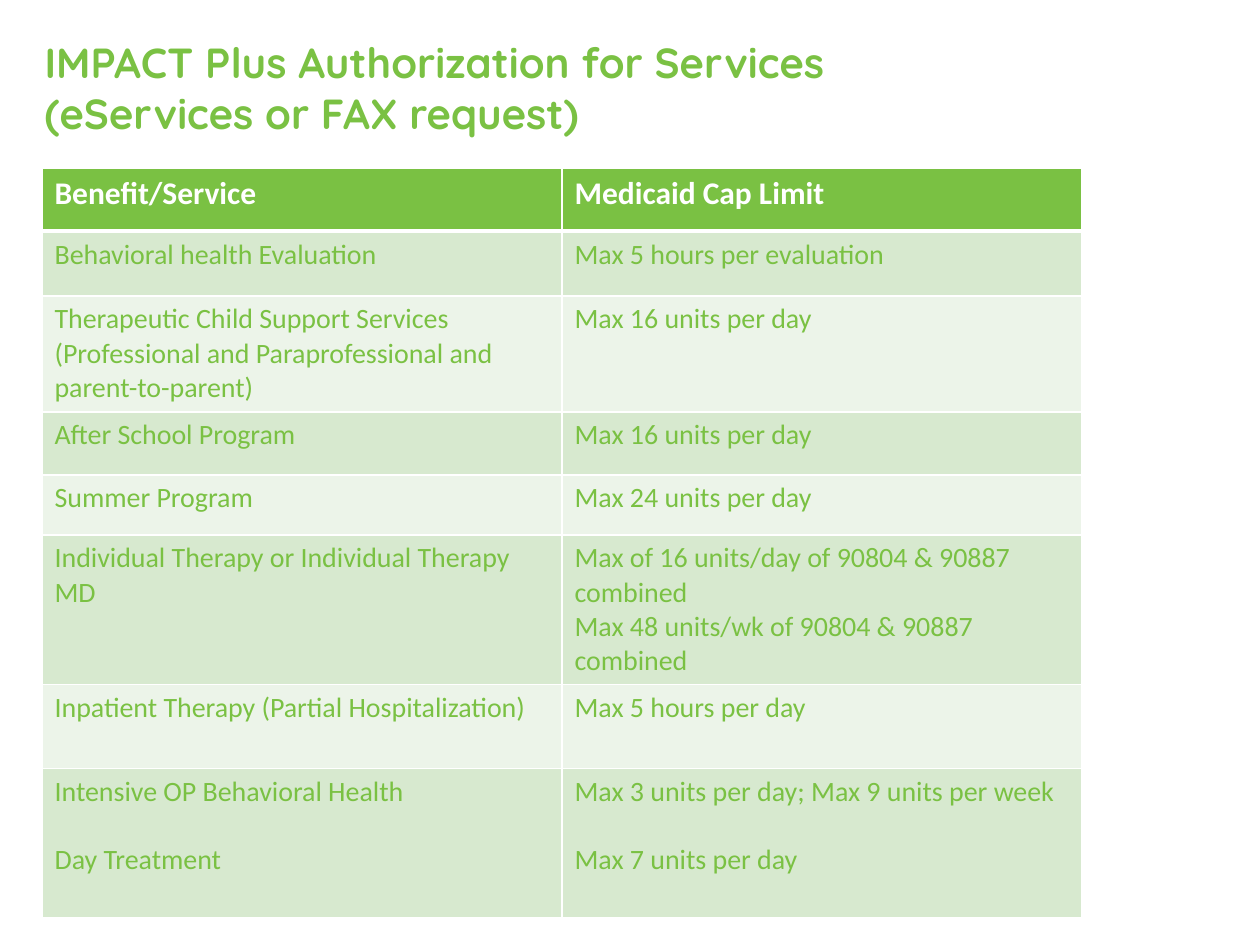
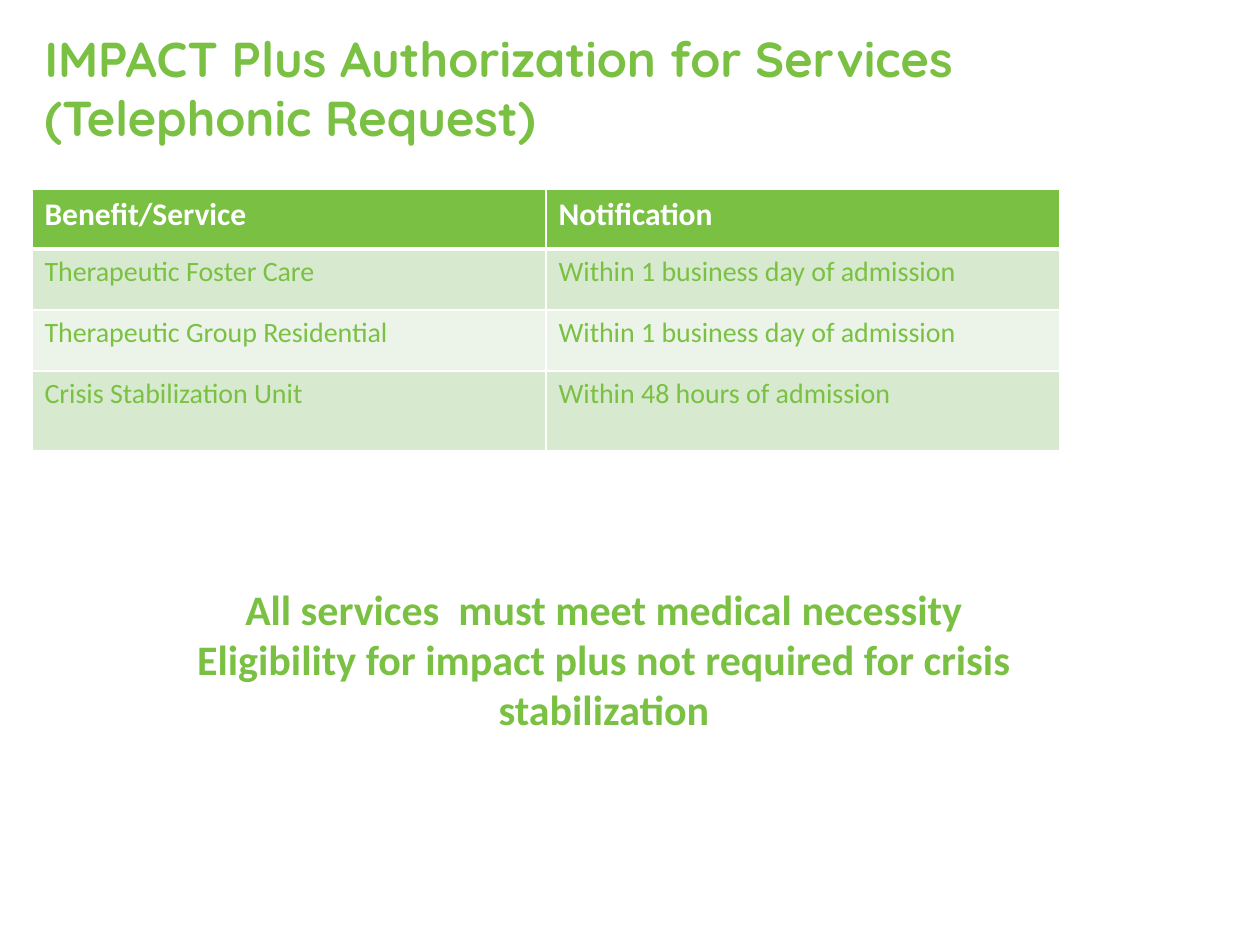
from dataclasses import dataclass

from lxml import etree
from pptx import Presentation
from pptx.dml.color import RGBColor
from pptx.enum.text import MSO_ANCHOR, PP_ALIGN
from pptx.oxml.ns import qn
from pptx.util import Emu, Pt

MIDDLE = MSO_ANCHOR.MIDDLE
LEFT, CENTER = PP_ALIGN.LEFT, PP_ALIGN.CENTER

# Shared look
PX_PER_INCH = 126
GREEN, WHITE = "7AC143", "FFFFFF"
BANDS = ("D7E9CF", "ECF4E9")
TITLE_FONT, BODY_FONT = "Quicksand", "Calibri"
TITLE_BOX = (32, 24, 1029, 126)
TITLE_ONLY = 5


@dataclass
class Row:
    height: int
    service: str
    limit: str
    gap: float = 0  # points between the paragraphs of a cell


@dataclass
class ServiceTable:
    left: int
    top: int
    col_width: int
    rows: list[Row]


@dataclass
class ServiceSlide:
    title: str
    title_size: int
    table: ServiceTable
    note: str = ""


def px(n: int) -> Emu:
    return Emu(round(n * 914400 / PX_PER_INCH))


def rgb(color: str) -> RGBColor:
    return RGBColor.from_string(color)


def set_font(p, name: str, size: int, color: str, bold: bool) -> None:
    p.font.name = name
    p.font.size = Pt(size)
    p.font.bold = bold
    p.font.color.rgb = rgb(color)


def set_border(cell, side: str, width: int) -> None:
    ln = etree.SubElement(cell._tc.get_or_add_tcPr(), qn(f"a:{side}"), w=str(Pt(width)))
    fill = etree.SubElement(ln, qn("a:solidFill"))
    etree.SubElement(fill, qn("a:srgbClr"), val=WHITE)


def add_title(s, text: str, size: int) -> None:
    title = s.shapes.title
    title.left, title.top, title.width, title.height = map(px, TITLE_BOX)
    tf = title.text_frame
    tf.text = text
    tf.vertical_anchor = MIDDLE
    p = tf.paragraphs[0]
    p.alignment = LEFT
    set_font(p, TITLE_FONT, size, GREEN, True)


def fill_cell(cell, text: str, row_no: int, gap: float) -> None:
    header = row_no == 0
    # Borders come before the fill; a thick rule sits under the header
    set_border(cell, "lnL", 1)
    set_border(cell, "lnR", 1)
    set_border(cell, "lnT", 3 if row_no == 1 else 1)
    set_border(cell, "lnB", 3 if header else 1)
    cell.fill.solid()
    cell.fill.fore_color.rgb = rgb(GREEN if header else BANDS[(row_no - 1) % 2])
    cell.text_frame.text = text
    for i, p in enumerate(cell.text_frame.paragraphs):
        if i and gap:
            p.space_before = Pt(gap)
        set_font(p, BODY_FONT, 18 if header else 16, WHITE if header else GREEN, header)


def add_service_table(s, spec_: ServiceTable) -> None:
    rows = spec_.rows
    height = sum(row.height for row in rows)
    table = s.shapes.add_table(len(rows), 2, px(spec_.left), px(spec_.top),
                               px(2 * spec_.col_width), px(height)).table
    for col in table.columns:
        col.width = px(spec_.col_width)
    for r, row in enumerate(rows):
        table.rows[r].height = px(row.height)
        for c, text in enumerate((row.service, row.limit)):
            fill_cell(table.cell(r, c), text, r, row.gap)


def add_note(s, text: str) -> None:
    tf = s.shapes.add_textbox(px(158), px(577), px(892), px(165)).text_frame
    tf.word_wrap = True
    tf.text = text
    for p in tf.paragraphs:
        p.alignment = CENTER
        set_font(p, BODY_FONT, 24, GREEN, True)


SLIDES = [
    ServiceSlide(
        "IMPACT Plus Authorization for Services\v(eServices or FAX request)", 24,
        ServiceTable(42, 168, 520, [
            Row(63, "Benefit/Service", "Medicaid Cap Limit"),
            Row(65, "Behavioral health Evaluation", "Max 5 hours per evaluation"),
            Row(116, "Therapeutic Child Support Services (Professional and "
                     "Paraprofessional and parent-to-parent)", "Max 16 units per day"),
            Row(63, "After School Program", "Max 16 units per day"),
            Row(60, "Summer Program", "Max 24 units per day"),
            Row(149, "Individual Therapy or Individual Therapy MD",
                "Max of 16 units/day of 90804 & 90887 combined\n"
                "Max 48 units/wk of 90804 & 90887 combined"),
            Row(84, "Inpatient Therapy (Partial Hospitalization)", "Max 5 hours per day"),
            Row(149, "Intensive OP Behavioral Health\nDay Treatment",
                "Max 3 units per day; Max 9 units per week\nMax 7 units per day", 19.5),
        ])),
    ServiceSlide(
        "IMPACT Plus Authorization for Services\v(Telephonic Request)", 28,
        ServiceTable(32, 189, 514, [
            Row(60, "Benefit/Service", "Notification"),
            Row(61, "Therapeutic Foster Care", "Within 1 business day of admission"),
            Row(61, "Therapeutic Group Residential", "Within 1 business day of admission"),
            Row(80, "Crisis Stabilization Unit", "Within 48 hours of admission"),
        ]),
        "All services  must meet medical necessity\n"
        "Eligibility for impact plus not required for crisis stabilization"),
]


def main() -> None:
    prs = Presentation()
    prs.slide_width, prs.slide_height = px(1260), px(945)
    for item in SLIDES:
        s = prs.slides.add_slide(prs.slide_layouts[TITLE_ONLY])
        add_title(s, item.title, item.title_size)
        add_service_table(s, item.table)
        if item.note:
            add_note(s, item.note)
    prs.save("out.pptx")


if __name__ == "__main__":
    main()
